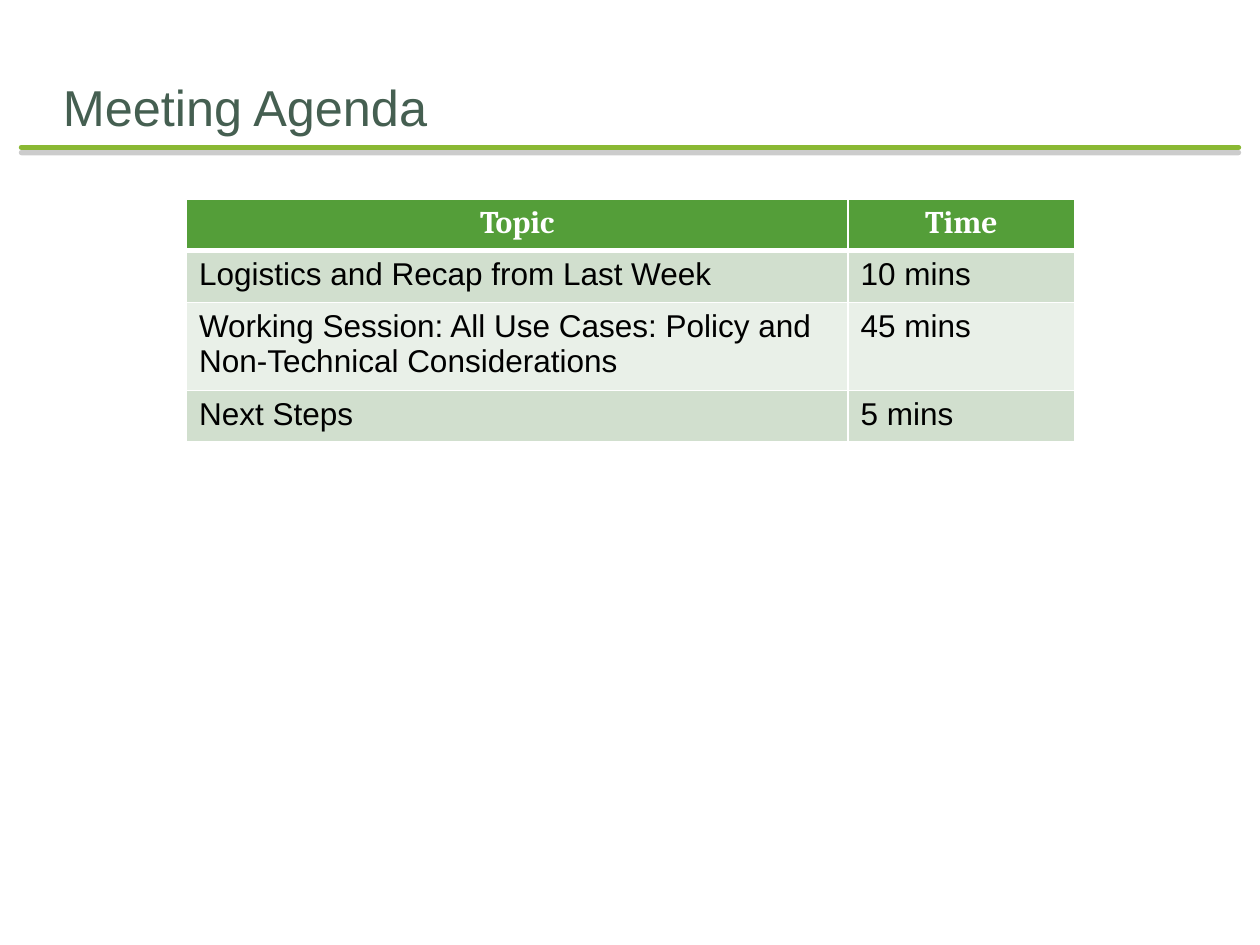
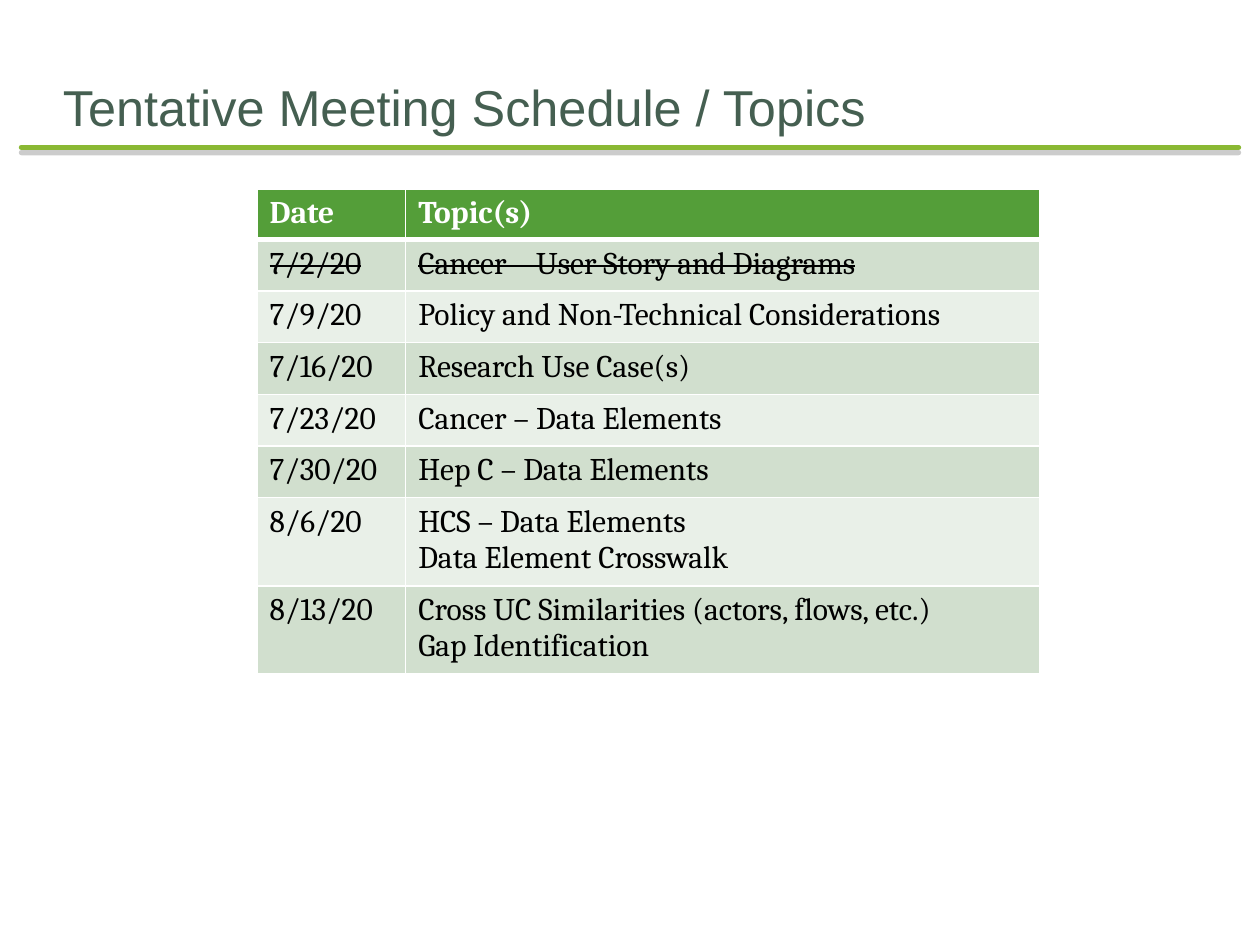
import pptx
import pptx.dml.color
import pptx.enum.shapes
import pptx.enum.text
import pptx.oxml
import pptx.oxml.ns
import pptx.util
from pptx.util import Inches

COLORS = {
    "title": "455F51",
    "rule": "8AB833",
    "shadow": "808080",
    "header": "549E39",
    "odd": "D1DFCE",
    "even": "E9F0E8",
    "text": "000000",
    "white": "FFFFFF",
}
NAMESPACE = pptx.oxml.ns.nsdecls("a")


class Deck:
    """Holds the shared style and the current slide."""

    def __init__(self):
        self.deck = pptx.Presentation()
        self.deck.slide_width = Inches(10)
        self.deck.slide_height = Inches(7.5)
        self.page = None

    def add_page(self, title):
        self.page = self.deck.slides.add_slide(self.deck.slide_layouts[6])
        self.add_rule()
        self.add_title(title)

    def add_rule(self):
        rule = self.page.shapes.add_connector(
            pptx.enum.shapes.MSO_CONNECTOR.STRAIGHT,
            Inches(0.17), Inches(1.17), Inches(9.83), Inches(1.17))
        rule.line.color.rgb = pptx.dml.color.RGBColor.from_string(COLORS["rule"])
        rule.line.width = pptx.util.Pt(3)
        rule.line._get_or_add_ln().set("cap", "rnd")
        rule._element.spPr.append(pptx.oxml.parse_xml(
            f'<a:effectLst {NAMESPACE}><a:outerShdw blurRad="0" '
            f'dist="{pptx.util.Pt(3)}" dir="5400000" rotWithShape="0">'
            f'<a:srgbClr val="{COLORS["shadow"]}"><a:alpha val="40000"/>'
            '</a:srgbClr></a:outerShdw></a:effectLst>'))

    def add_title(self, title):
        box = self.page.shapes.add_textbox(
            Inches(0.5), Inches(0.5), Inches(9), Inches(0.58))
        frame = box.text_frame
        frame.word_wrap = True
        frame.vertical_anchor = pptx.enum.text.MSO_ANCHOR.BOTTOM
        frame.margin_left = frame.margin_right = frame.margin_bottom = 0
        frame.margin_top = Inches(0.05)
        self.add_run(frame.paragraphs[0], title, 28.8, "Arial", "title")

    def add_run(self, para, text, size, font, color, bold=False, strike=False):
        span = para.add_run()
        span.text = text
        span.font.size = pptx.util.Pt(size)
        span.font.name = font
        span.font.bold = bold
        span.font.color.rgb = pptx.dml.color.RGBColor.from_string(COLORS[color])
        if strike:
            span._r.get_or_add_rPr().set("strike", "sngStrike")

    def add_table(self, left, top, widths, heights, rows, body_font,
                  header_align=None, struck_rows=()):
        table = self.page.shapes.add_table(
            len(rows), len(widths), Inches(left), Inches(top),
            Inches(sum(widths)), Inches(sum(heights))).table
        for column, width in zip(table.columns, widths):
            column.width = Inches(width)
        for index, (values, height) in enumerate(zip(rows, heights)):
            table.rows[index].height = Inches(height)
            header = index == 0
            fill = "header" if header else "odd" if index % 2 else "even"
            for column, text in enumerate(values):
                cell = table.cell(index, column)
                cell.fill.solid()
                cell.fill.fore_color.rgb = pptx.dml.color.RGBColor.from_string(
                    COLORS[fill])
                # The header's lower border is the top border of the first row
                self.add_borders(cell, top=3 if index == 1 else 1,
                                 bottom=3 if header else 1)
                for number, line in enumerate(text.split("\n")):
                    frame = cell.text_frame
                    para = frame.add_paragraph() if number else frame.paragraphs[0]
                    if header:
                        para.alignment = header_align
                    self.add_run(para, line, 18,
                                 "Cambria" if header else body_font,
                                 "white" if header else "text",
                                 header, index in struck_rows)

    def add_borders(self, cell, top, bottom):
        properties = cell._tc.get_or_add_tcPr()
        sides = {"lnL": 1, "lnR": 1, "lnT": top, "lnB": bottom}
        for position, (side, width) in enumerate(sides.items()):
            properties.insert(position, pptx.oxml.parse_xml(
                f'<a:{side} {NAMESPACE} w="{pptx.util.Pt(width)}"><a:solidFill>'
                f'<a:srgbClr val="{COLORS["white"]}"/></a:solidFill></a:{side}>'))


def main():
    slides = Deck()

    # Agenda
    slides.add_page("Meeting Agenda")
    slides.add_table(
        1.48, 1.58, [5.25, 1.8], [0.41] * 4,
        [("Topic", "Time"),
         ("Logistics and Recap from Last Week", "10 mins"),
         ("Working Session: All Use Cases: Policy and "
          "Non-Technical Considerations", "45 mins"),
         ("Next Steps", "5 mins")],
        "Arial", header_align=pptx.enum.text.PP_ALIGN.CENTER)

    # Schedule, with the meeting already held struck out
    slides.add_page("Tentative Meeting Schedule / Topics")
    slides.add_table(
        2.04, 1.5, [1.18, 5.03], [0.16] + [0.41] * 7,
        [("Date", "Topic(s)"),
         ("7/2/20", "Cancer – User Story and Diagrams"),
         ("7/9/20", "Policy and Non-Technical Considerations"),
         ("7/16/20", "Research Use Case(s)"),
         ("7/23/20", "Cancer – Data Elements"),
         ("7/30/20", "Hep C – Data Elements"),
         ("8/6/20", "HCS – Data Elements\nData Element Crosswalk"),
         ("8/13/20", "Cross UC Similarities (actors, flows, etc.)\n"
                     "Gap Identification")],
        "Cambria", struck_rows=(1,))

    slides.deck.save("out.pptx")


if __name__ == "__main__":
    main()
